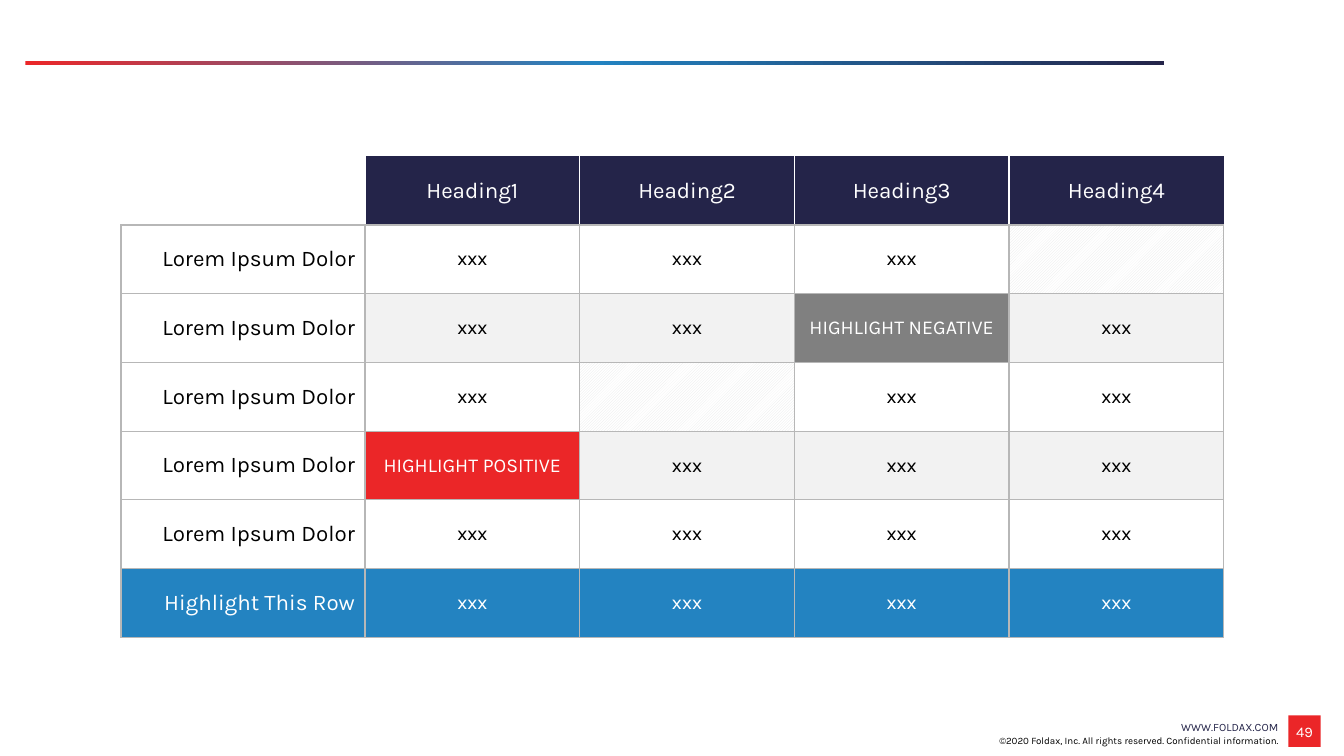
from copy import deepcopy

from lxml.etree import SubElement
from pptx import Presentation
from pptx.dml.color import RGBColor
from pptx.enum.dml import MSO_PATTERN
from pptx.enum.shapes import MSO_SHAPE
from pptx.enum.text import MSO_ANCHOR, PP_ALIGN
from pptx.oxml.ns import qn
from pptx.util import Cm, Pt

FONT = "Karla"
WHITE = RGBColor(0xFF, 0xFF, 0xFF)
BLACK = RGBColor(0, 0, 0)
NAVY = RGBColor(0x24, 0x24, 0x49)
BLUE = RGBColor(0x23, 0x83, 0xC1)
RED = RGBColor(0xEB, 0x26, 0x28)
GREY = RGBColor(0x80, 0x80, 0x80)
PALE = RGBColor(0xF2, 0xF2, 0xF2)
STRIPE = RGBColor(0xE7, 0xE8, 0xE8)
RULE = RGBColor(0xB7, 0xB7, 0xB7)

LABEL = "Lorem Ipsum Dolor"
NEGATIVE = "HIGHLIGHT NEGATIVE"
POSITIVE = "HIGHLIGHT POSITIVE"
ROWS = [
    ["", "Heading1", "Heading2", "Heading3", "Heading4"],
    [LABEL, "xxx", "xxx", "xxx", ""],
    [LABEL, "xxx", "xxx", NEGATIVE, "xxx"],
    [LABEL, "xxx", "", "xxx", "xxx"],
    [LABEL, POSITIVE, "xxx", "xxx", "xxx"],
    [LABEL, "xxx", "xxx", "xxx", "xxx"],
    ["Highlight This Row", "xxx", "xxx", "xxx", "xxx"],
]
LAST_ROW, LAST_COL = len(ROWS) - 1, len(ROWS[0]) - 1
HIGHLIGHTS = {NEGATIVE: GREY, POSITIVE: RED}


def write(tf, text, size, color, align):
    p = tf.paragraphs[0]
    p.text = text
    p.alignment = align
    p.font.name = FONT
    p.font.size = Pt(size)
    p.font.bold = False
    p.font.color.rgb = color
    return p


def set_borders(cell, colors):
    """Draw the left, right, top and bottom borders; None leaves one out."""
    tcPr = cell._tc.get_or_add_tcPr()
    for side, color in zip("LRTB", colors):
        ln = SubElement(tcPr, qn(f"a:ln{side}"), w=str(Pt(1)))
        if color is None:
            SubElement(ln, qn("a:noFill"))
        else:
            fill = SubElement(ln, qn("a:solidFill"))
            SubElement(fill, qn("a:srgbClr"), val=str(color))


def cell_borders(row, col):
    if row:
        return RULE, RULE, RULE, RULE
    return (WHITE if col else None, WHITE if col < LAST_COL else None,
            None, RULE)


def cell_color(row, col, text):
    """Return the solid fill of a cell, or None for a clear one."""
    if row == LAST_ROW:
        return BLUE
    if col == 0:
        return None
    if row == 0:
        return NAVY
    return HIGHLIGHTS.get(text, WHITE if row % 2 else PALE)


def format_cell(cell, row, col, text):
    set_borders(cell, cell_borders(row, col))
    cell.vertical_anchor = MSO_ANCHOR.MIDDLE
    color = cell_color(row, col, text)
    if row and not text:
        cell.fill.patterned()
        cell.fill.pattern = MSO_PATTERN.DARK_UPWARD_DIAGONAL
        cell.fill.fore_color.rgb = STRIPE
        cell.fill.back_color.rgb = WHITE
    elif color is None:
        cell.fill.background()
    else:
        cell.fill.solid()
        cell.fill.fore_color.rgb = color
    if text:
        p = write(cell.text_frame, text,
                  14 if row and col else 16,
                  BLACK if color in (None, WHITE, PALE) else WHITE,
                  PP_ALIGN.CENTER if col else PP_ALIGN.RIGHT)
        if row:
            p.space_after = Pt(2)


def add_comparison_table(slide, left, top, width, height, label_width):
    frame = slide.shapes.add_table(len(ROWS), len(ROWS[0]),
                                   left, top, width, height)
    table = frame.table
    table.first_row = table.horz_banding = False
    for col, column in enumerate(table.columns):
        column.width = (width - label_width) // LAST_COL if col else label_width
    for row, texts in enumerate(ROWS):
        table.rows[row].height = height // len(ROWS)
        for col, text in enumerate(texts):
            format_cell(table.cell(row, col), row, col, text)


def add_gradient_rule(slide, left, top, width, height):
    sp = slide.shapes.add_shape(MSO_SHAPE.RECTANGLE, left, top, width, height)
    sp.shadow.inherit = False
    sp.line.fill.background()
    sp.fill.gradient()
    sp.fill.gradient_angle = 0
    stops = sp.element.spPr.find(".//" + qn("a:gsLst"))
    stops.append(deepcopy(stops[0]))
    for i, (stop, color) in enumerate(zip(sp.fill.gradient_stops,
                                          (RED, BLUE, NAVY))):
        stop.position = i / 2
        stop.color.rgb = color


def add_footer_text(slide, box, text, size, color, anchor):
    tf = slide.shapes.add_textbox(*box).text_frame
    tf.word_wrap = True
    tf.vertical_anchor = anchor
    write(tf, text, size, color, PP_ALIGN.RIGHT)


def add_footer(slide, left, top, width):
    """Put the web address, copyright line and page number in a strip."""
    badge = Cm(0.81)
    right = left + width - badge
    add_footer_text(slide, (right - Cm(5.94), top, Cm(5.94), Cm(0.86)),
                    "WWW.FOLDAX.COM", 8, NAVY, MSO_ANCHOR.MIDDLE)
    add_footer_text(
        slide, (left, top + Cm(0.03), right - left, Cm(1.02)),
        "©2020 Foldax, Inc. All rights reserved. Confidential information.",
        7, BLACK, MSO_ANCHOR.BOTTOM)
    sp = slide.shapes.add_shape(MSO_SHAPE.RECTANGLE, right, top + Cm(0.15),
                                badge, Cm(0.79))
    sp.shadow.inherit = False
    sp.line.fill.background()
    sp.fill.solid()
    sp.fill.fore_color.rgb = RED
    tf = sp.text_frame
    tf.margin_left = tf.margin_right = Cm(0.05)
    tf.margin_top = tf.margin_bottom = Cm(0.05)
    tf.vertical_anchor = MSO_ANCHOR.MIDDLE
    write(tf, "49", 10.5, WHITE, PP_ALIGN.CENTER)


def main():
    prs = Presentation()
    prs.slide_width, prs.slide_height = Cm(33.87), Cm(19.05)
    slide = prs.slides.add_slide(prs.slide_layouts[6])
    add_gradient_rule(slide, Cm(0.64), Cm(1.54), Cm(28.7), Cm(0.1))
    add_comparison_table(slide, Cm(3.05), Cm(3.94), Cm(27.79), Cm(12.12),
                         label_width=Cm(6.15))
    add_footer(slide, Cm(21.05), Cm(17.88), Cm(12.23))
    prs.save("out.pptx")


if __name__ == "__main__":
    main()
